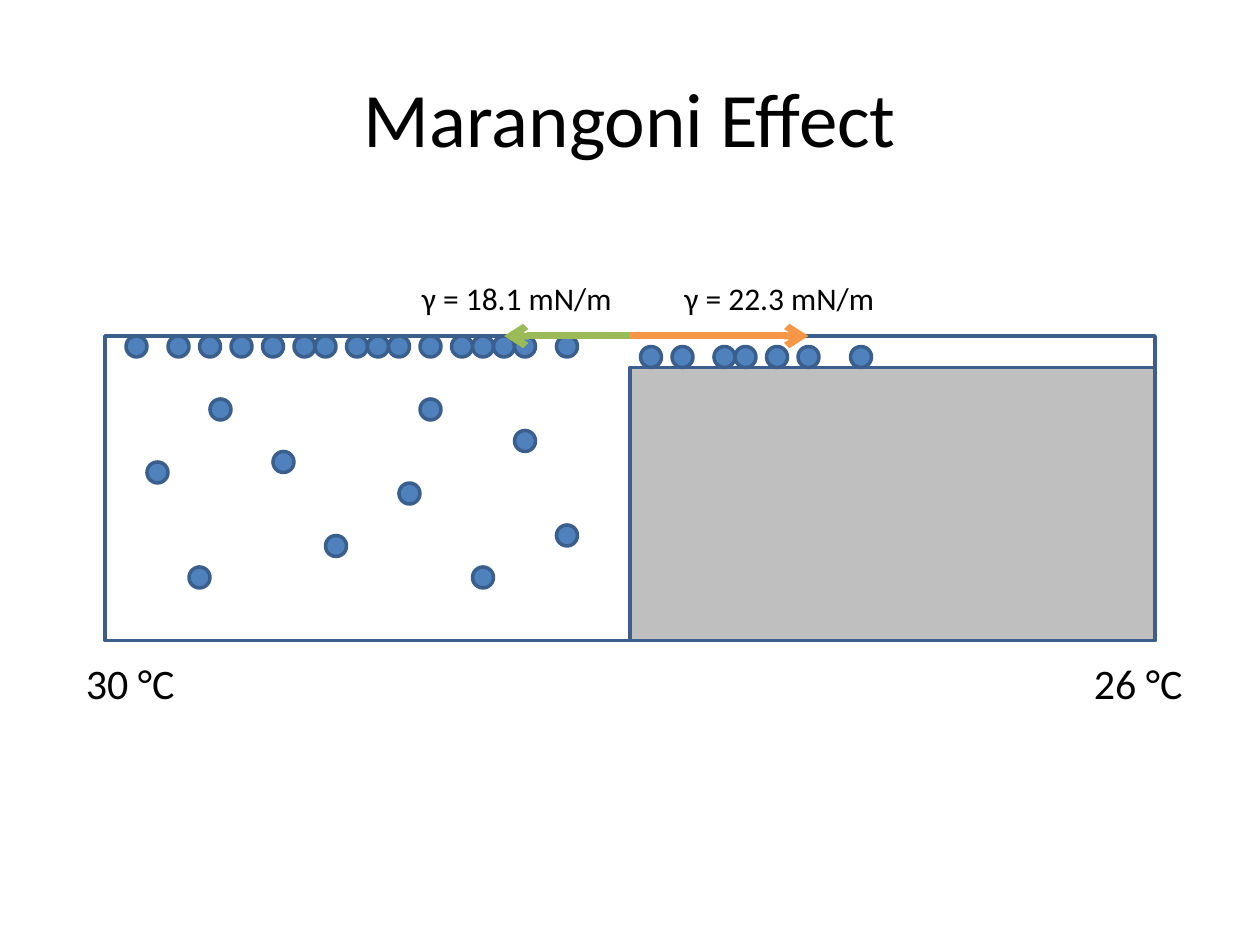
from lxml import etree
from pptx import Presentation
from pptx.dml.color import RGBColor
from pptx.enum.shapes import MSO_CONNECTOR, MSO_SHAPE
from pptx.enum.text import MSO_ANCHOR, MSO_AUTO_SIZE, PP_ALIGN
from pptx.oxml.ns import qn
from pptx.util import Pt

RECT, OVAL = MSO_SHAPE.RECTANGLE, MSO_SHAPE.OVAL
STRAIGHT = MSO_CONNECTOR.STRAIGHT
MIDDLE, TOP = MSO_ANCHOR.MIDDLE, MSO_ANCHOR.TOP
CENTER, LEFT = PP_ALIGN.CENTER, PP_ALIGN.LEFT
GROW, FIXED = MSO_AUTO_SIZE.SHAPE_TO_FIT_TEXT, MSO_AUTO_SIZE.NONE

COLORS = {
    "text": "000000", "liquid": "FFFFFF", "block": "BFBFBF",
    "particle": "4F81BD", "outline": "3A5F8C",
    "warm_pull": "9BBB59", "cool_pull": "F79646",
}
FONT = "Calibri"
UNIT = 6  # drawing grid, in points
PARTICLE = 2 * UNIT

# Particle positions in grid units, from the left edge of their region
WARM_SURFACE = [2, 6, 9, 12, 15, 18, 20, 23, 25, 27, 30, 33, 35, 37, 39, 43]
COOL_FILM = [1, 4, 8, 10, 13, 16, 21]
BULK = [(4, 12), (8, 22), (10, 6), (16, 11), (21, 19), (28, 14),
        (30, 6), (35, 22), (39, 9), (43, 18)]


def rgb(name):
    return RGBColor.from_string(COLORS[name])


def add_text(slide, box, text, size, align=LEFT, anchor=TOP, fit=GROW):
    label = slide.shapes.add_textbox(*map(Pt, box))
    frame = label.text_frame
    frame_format = {"word_wrap": True, "vertical_anchor": anchor, "auto_size": fit}
    for key, value in frame_format.items():
        setattr(frame, key, value)
    paragraph = frame.paragraphs[0]
    paragraph.text, paragraph.alignment = text, align
    for key, value in {"name": FONT, "size": Pt(size)}.items():
        setattr(paragraph.font, key, value)
    paragraph.font.color.rgb = rgb("text")


def add_outlined(slide, kind, box, fill):
    part = slide.shapes.add_shape(kind, *map(Pt, box))
    part.shadow.inherit = False
    part.fill.solid()
    part.fill.fore_color.rgb = rgb(fill)
    part.line.color.rgb = rgb("outline")
    part.line.width = Pt(2)
    return part


def add_pull(slide, tank, start, end, color):
    """Surface tension arrow from the middle of the tank's top side."""
    pull = slide.shapes.add_connector(STRAIGHT, *map(Pt, (*start, *end)))
    pull.begin_connect(tank, 0)
    pull.line.color.rgb = rgb(color)
    pull.line.width = Pt(4)
    etree.SubElement(pull.line._get_or_add_ln(), qn("a:tailEnd"), type="arrow")
    etree.SubElement(pull._element.spPr, qn("a:effectLst"))


def draw_title(slide, box):
    add_text(slide, box, "Marangoni Effect", 44, CENTER, MIDDLE, FIXED)


def draw_tank(slide, box):
    left, top, width, height = box
    middle, film = left + width / 2, 3 * UNIT

    # Liquid and the block under the thin film
    tank = add_outlined(slide, RECT, box, "liquid")
    block = (middle, top + film, width / 2, height - film)
    add_outlined(slide, RECT, block, "block")

    # Temperatures below the two ends
    for text, x in (("30 °C", left - 18), ("26 °C", left + width - 42)):
        add_text(slide, (x, top + height + UNIT, 66, 36), text, 24)

    # Particles: warm surface, cool film, bulk liquid
    places = [(left + x * UNIT, top) for x in WARM_SURFACE]
    places += [(middle + x * UNIT, top + UNIT) for x in COOL_FILM]
    places += [(left + x * UNIT, top + y * UNIT) for x, y in BULK]
    for x, y in places:
        add_outlined(slide, OVAL, (x, y, PARTICLE, PARTICLE), "particle")

    # Surface tension on each side of the step
    pulls = (("γ = 22.3 mN/m", 24, 102, "cool_pull"),
             ("γ = 18.1 mN/m", -126, -72, "warm_pull"))
    for text, label_shift, reach, color in pulls:
        add_pull(slide, tank, (middle, top), (middle + reach, top), color)
        add_text(slide, (middle + label_shift, top - 36, 126, 29), text, 18)


def main():
    deck = Presentation()
    deck.slide_width, deck.slide_height = Pt(720), Pt(540)
    slide = deck.slides.add_slide(deck.slide_layouts[6])
    draw_title(slide, (36, 21.6, 648, 90))
    draw_tank(slide, (60, 192, 600, 174))
    deck.save("out.pptx")


if __name__ == "__main__":
    main()
